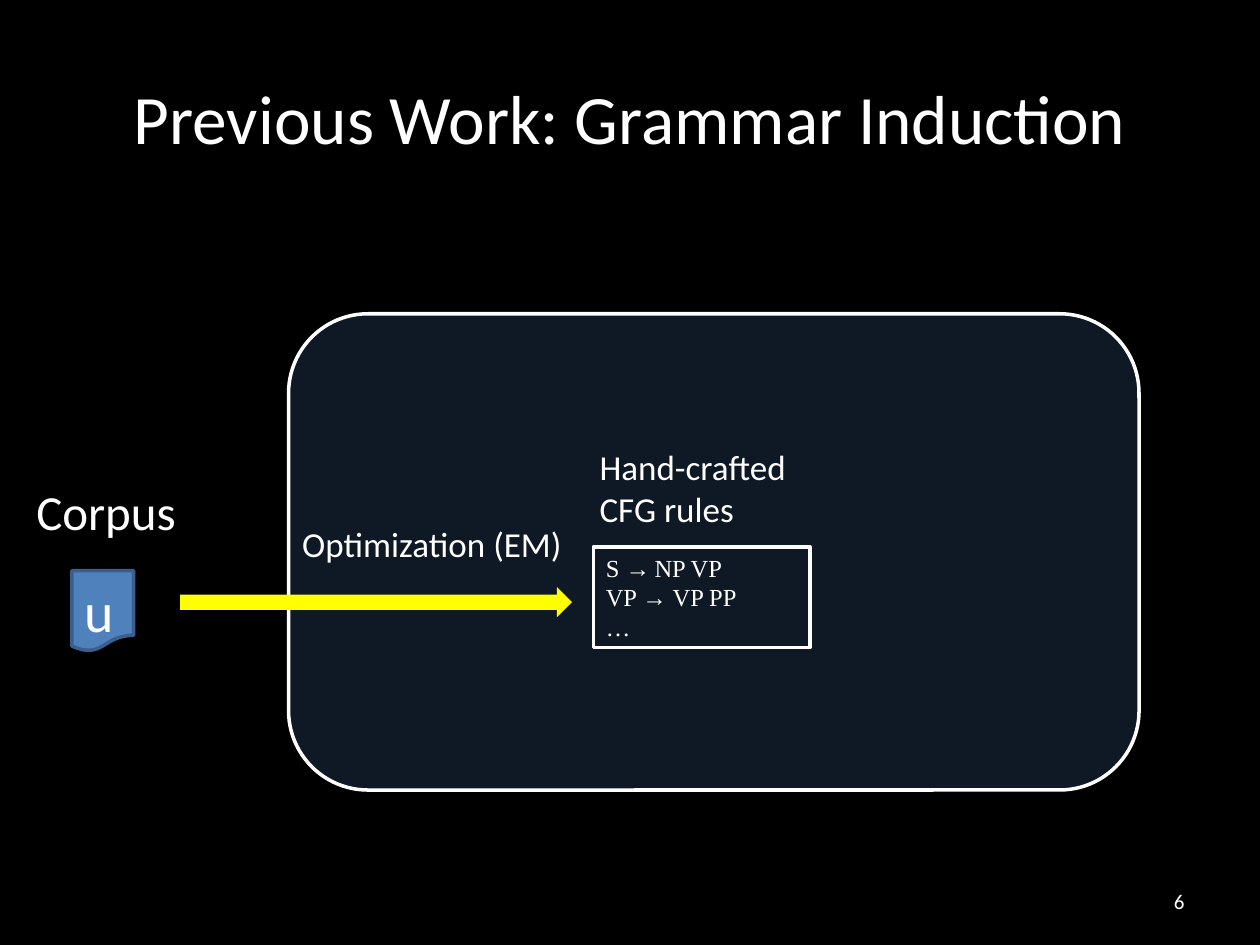
from lxml.etree import SubElement
from pptx import Presentation
from pptx.dml.color import RGBColor
from pptx.enum.shapes import MSO_SHAPE as Shape
from pptx.enum.text import MSO_ANCHOR as Anchor, MSO_AUTO_SIZE as AutoSize, PP_ALIGN as Align
from pptx.oxml.ns import qn
from pptx.util import Inches, Pt

WHITE, BLACK, BLUE, DARK_BLUE, YELLOW = "FFFFFF", "000000", "4F81BD", "3A5F8C", "FFFF00"
SANS, SERIF = "Calibri", "Times New Roman"


def color(code):
    return RGBColor.from_string(code)


def paint(fill, code):
    fill.solid()
    fill.fore_color.rgb = color(code)


class SlideBuilder:
    """Holds the text style and the slide being built."""

    def __init__(self, page, font=SANS, ink=WHITE):
        self.page, self.font, self.ink = page, font, ink

    def background(self, code):
        paint(self.page.background.fill, code)

    def add_lines(self, frame, lines, size, font=None, align=Align.LEFT):
        """Fill a frame; a line is a string or a list of (text, size) spans."""
        for index, line in enumerate(lines):
            para = frame.paragraphs[0] if index == 0 else frame.add_paragraph()
            para.alignment = align
            spans = [(line, size)] if isinstance(line, str) else line
            for text, points in spans:
                span = para.add_run()
                span.text = text
                style = {"name": font or self.font, "size": Pt(points)}
                for key, value in style.items():
                    setattr(span.font, key, value)
                span.font.color.rgb = color(self.ink)

    def text(self, place, lines, size, wrap=True, anchor=Anchor.TOP, fit=AutoSize.NONE, **style):
        box = self.page.shapes.add_textbox(*map(Inches, place))
        layout = {"word_wrap": wrap, "vertical_anchor": anchor, "auto_size": fit}
        for key, value in layout.items():
            setattr(box.text_frame, key, value)
        self.add_lines(box.text_frame, lines, size, **style)

    def shape(self, kind, place, fill=None, line=None, opacity=None):
        shape = self.page.shapes.add_shape(kind, *map(Inches, place))
        shape.shadow.inherit = False
        if fill:
            paint(shape.fill, fill)
        else:
            shape.fill.background()
        if opacity:
            tint = shape.element.spPr.find(qn("a:solidFill"))[0]
            SubElement(tint, qn("a:alpha"), val=str(opacity * 1000))
        if line:
            paint(shape.line.fill, line)
            shape.line.width = Pt(2)
        else:
            shape.line.fill.background()
        return shape


def main():
    deck = Presentation()
    deck.slide_width, deck.slide_height = Inches(10), Inches(7.5)
    slide = SlideBuilder(deck.slides.add_slide(deck.slide_layouts[6]))
    grow = AutoSize.SHAPE_TO_FIT_TEXT

    slide.background(BLACK)
    slide.shape(Shape.ROUNDED_RECTANGLE, (2.29, 2.49, 6.75, 3.78), BLUE, WHITE, opacity=20)
    slide.text((0.5, 0.3, 9, 1.25), ["Previous Work: Grammar Induction"], 39.6,
               anchor=Anchor.MIDDLE, align=Align.CENTER)
    slide.text((7.17, 6.95, 2.33, 0.4), ["6"], 12, anchor=Anchor.MIDDLE, align=Align.RIGHT)

    rules = [[("S →", 14), (" ", 10), ("NP VP", 14)], "VP → VP PP", "…"]
    slide.text((4.71, 4.34, 1.24, 0.84), rules, 14, wrap=False, fit=grow, font=SERIF)
    slide.shape(Shape.RECTANGLE, (4.71, 4.34, 1.72, 0.8), line=WHITE)
    slide.text((4.66, 3.49, 3.18, 0.77), ["Hand-crafted", "CFG rules"], 20, fit=grow)

    slide.text((2.3, 4.1, 2.78, 0.44), ["Optimization (EM)"], 20, fit=grow)
    slide.shape(Shape.RIGHT_ARROW, (1.43, 4.66, 3.11, 0.24), YELLOW)

    corpus = slide.shape(Shape.FLOWCHART_DOCUMENT, (0.57, 4.53, 0.49, 0.64), BLUE, DARK_BLUE)
    corpus.text_frame.vertical_anchor = Anchor.TOP
    slide.add_lines(corpus.text_frame, ["u"], 32)
    slide.text((0.19, 3.77, 1.32, 0.57), ["Corpus"], 28, wrap=False, fit=grow)

    deck.save("out.pptx")


if __name__ == "__main__":
    main()
